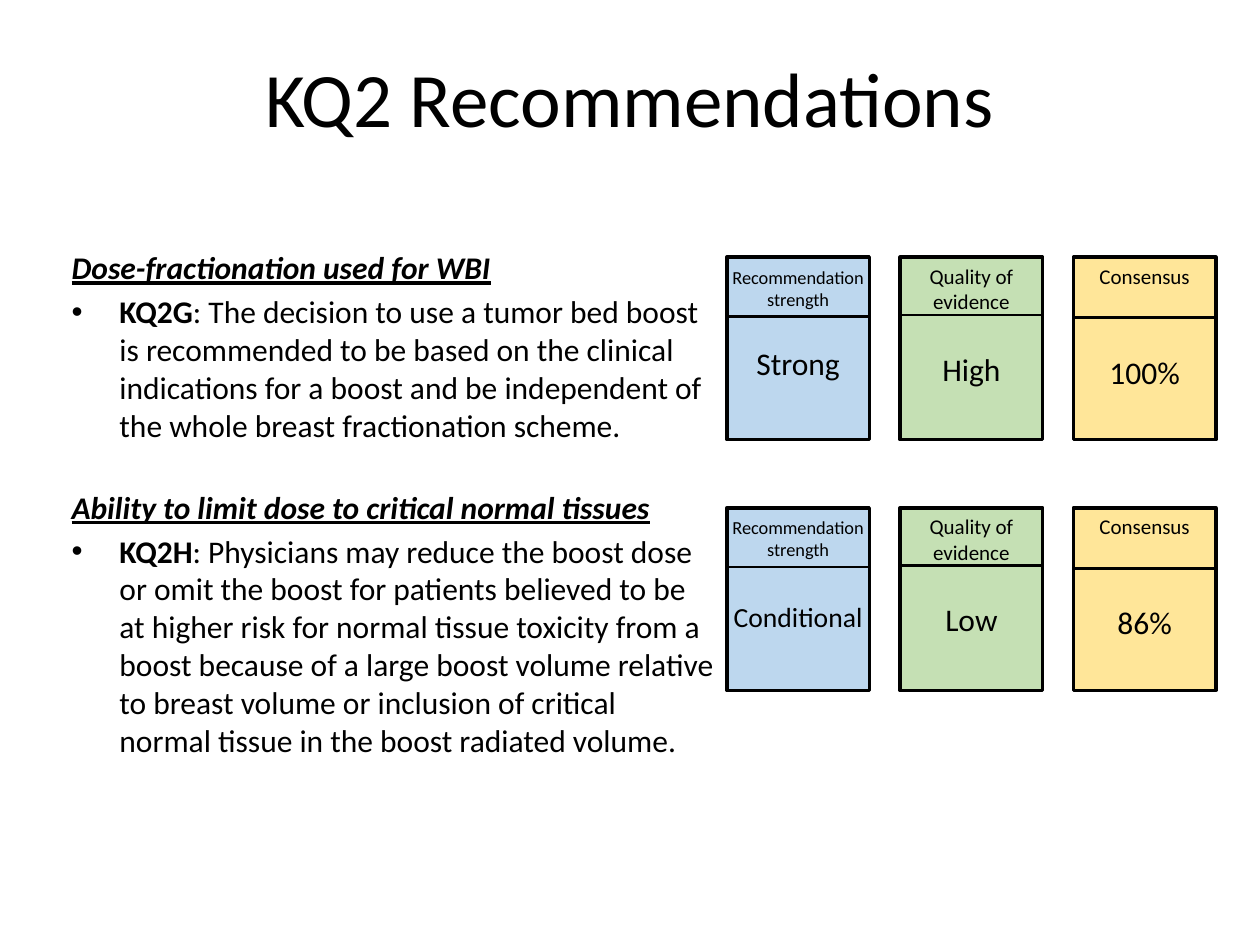
import dataclasses

import lxml.etree
import pptx
import pptx.dml.color
import pptx.enum.shapes
import pptx.enum.text
import pptx.oxml.ns
import pptx.util

Inches = pptx.util.Inches
Pt = pptx.util.Pt
CENTER = pptx.enum.text.PP_ALIGN.CENTER


@dataclasses.dataclass(frozen=True)
class Theme:
    font: str = "Calibri"
    ink: str = "000000"
    blue: str = "BDD7EE"
    green: str = "C5E0B4"
    yellow: str = "FFE699"
    title: float = 44
    body: float = 18
    long_value: float = 15.8
    label: float = 12
    long_label: float = 10.5
    border: float = 2
    divider: float = 1.5


def color(value):
    return pptx.dml.color.RGBColor.from_string(value)


class SlideBuilder:
    def __init__(self, page, theme):
        self.page = page
        self.theme = theme

    def style(self, para, size):
        para.font.name = self.theme.font
        para.font.size = Pt(size)
        para.font.color.rgb = color(self.theme.ink)

    def frame(self, left, top, width, height, margins=(0.1, 0.05, 0.1, 0.05)):
        box = self.page.shapes.add_textbox(
            Inches(left), Inches(top), Inches(width), Inches(height))
        frame = box.text_frame
        frame.word_wrap = True
        (frame.margin_left, frame.margin_top,
         frame.margin_right, frame.margin_bottom) = map(Inches, margins)
        return frame

    def centered_text(self, text, size, *place, **options):
        para = self.frame(*place, **options).paragraphs[0]
        para.text = text
        para.alignment = CENTER
        self.style(para, size)

    def heading(self, para, text, gap):
        para.text = text
        para.space_before = Pt(gap)
        self.style(para, self.theme.body)
        para.font.bold = para.font.italic = para.font.underline = True

    def bullet(self, para, code, text):
        properties = para._p.get_or_add_pPr()
        properties.set("marL", str(Inches(0.38)))
        properties.set("indent", str(Inches(-0.38)))
        ns = pptx.oxml.ns.qn
        lxml.etree.SubElement(properties, ns("a:buFont"), typeface="Arial")
        lxml.etree.SubElement(properties, ns("a:buChar"), char="•")
        para.space_before = Pt(3.6)
        self.style(para, self.theme.body)
        span = para.add_run()
        span.text = code
        span.font.bold = True
        para.add_run().text = text

    def rectangle(self, left, top, width, height, fill):
        shape = self.page.shapes.add_shape(
            pptx.enum.shapes.MSO_SHAPE.RECTANGLE,
            Inches(left), Inches(top), Inches(width), Inches(height))
        shape.shadow.inherit = False
        shape.fill.solid()
        shape.fill.fore_color.rgb = color(fill)
        shape.line.color.rgb = color(self.theme.ink)
        shape.line.width = Pt(self.theme.border)

    def divider(self, left, right, y):
        line = self.page.shapes.add_connector(
            pptx.enum.shapes.MSO_CONNECTOR.STRAIGHT,
            Inches(left), Inches(y), Inches(right), Inches(y))
        line.line.color.rgb = color(self.theme.ink)
        line.line.width = Pt(self.theme.divider)
        lxml.etree.SubElement(line._element.spPr, pptx.oxml.ns.qn("a:effectLst"))

    def card(self, left, top, column, value, size, value_offset):
        label, fill, label_size, margins, divider_offset = column
        width = 1.13
        self.rectangle(left, top, width, 1.45, fill)
        self.divider(left, left + width, top + divider_offset)
        self.centered_text(label, label_size, left, top, width, 0.5,
                           margins=margins)
        self.centered_text(value, size, left, top + value_offset, width, 0.63,
                           margins=(0.04, 0.28, 0.04, 0.05))


def main():
    theme = Theme()
    deck = pptx.Presentation()
    deck.slide_width, deck.slide_height = Inches(10), Inches(7.5)
    builder = SlideBuilder(deck.slides.add_slide(deck.slide_layouts[6]), theme)

    builder.centered_text("KQ2 Recommendations", theme.title, 0.5, 0.3, 9, 1.25,
                          margins=(0.1, 0.1, 0.1, 0.05))

    recommendations = [
        ("Dose-fractionation used for WBI", "KQ2G",
         ": The decision to use a tumor bed boost is recommended to be based on "
         "the clinical indications for a boost and be independent of the whole "
         "breast fractionation scheme."),
        ("Ability to limit dose to critical normal tissues", "KQ2H",
         ": Physicians may reduce the boost dose or omit the boost for patients "
         "believed to be at higher risk for normal tissue toxicity from a boost "
         "because of a large boost volume relative to breast volume or inclusion "
         "of critical normal tissue in the boost radiated volume."),
    ]
    body = builder.frame(0.47, 1.92, 5.3, 4.09)
    for index, (topic, code, text) in enumerate(recommendations):
        para = body.add_paragraph() if index else body.paragraphs[0]
        builder.heading(para, topic, 25.2 if index else 0)
        builder.bullet(body.add_paragraph(), code, text)

    wide = (0.1, 0.05, 0.1, 0.05)
    columns = [
        ("Recommendation strength", theme.blue, theme.long_label,
         (0.04, 0.07, 0.04, 0.07), 0.47),
        ("Quality of evidence", theme.green, theme.label, wide, 0.46),
        ("Consensus", theme.yellow, theme.label, wide, 0.48),
    ]
    ratings = [
        [("Strong", theme.body, 0.41), ("High", theme.body, 0.46),
         ("100%", theme.body, 0.48)],
        [("Conditional", theme.long_value, 0.45), ("Low", theme.body, 0.45),
         ("86%", theme.body, 0.48)],
    ]
    for row, values in enumerate(ratings):
        for index, (column, rating) in enumerate(zip(columns, values)):
            builder.card(5.77 + 1.375 * index, 2.04 + 1.99 * row, column, *rating)

    deck.save("out.pptx")


if __name__ == "__main__":
    main()
